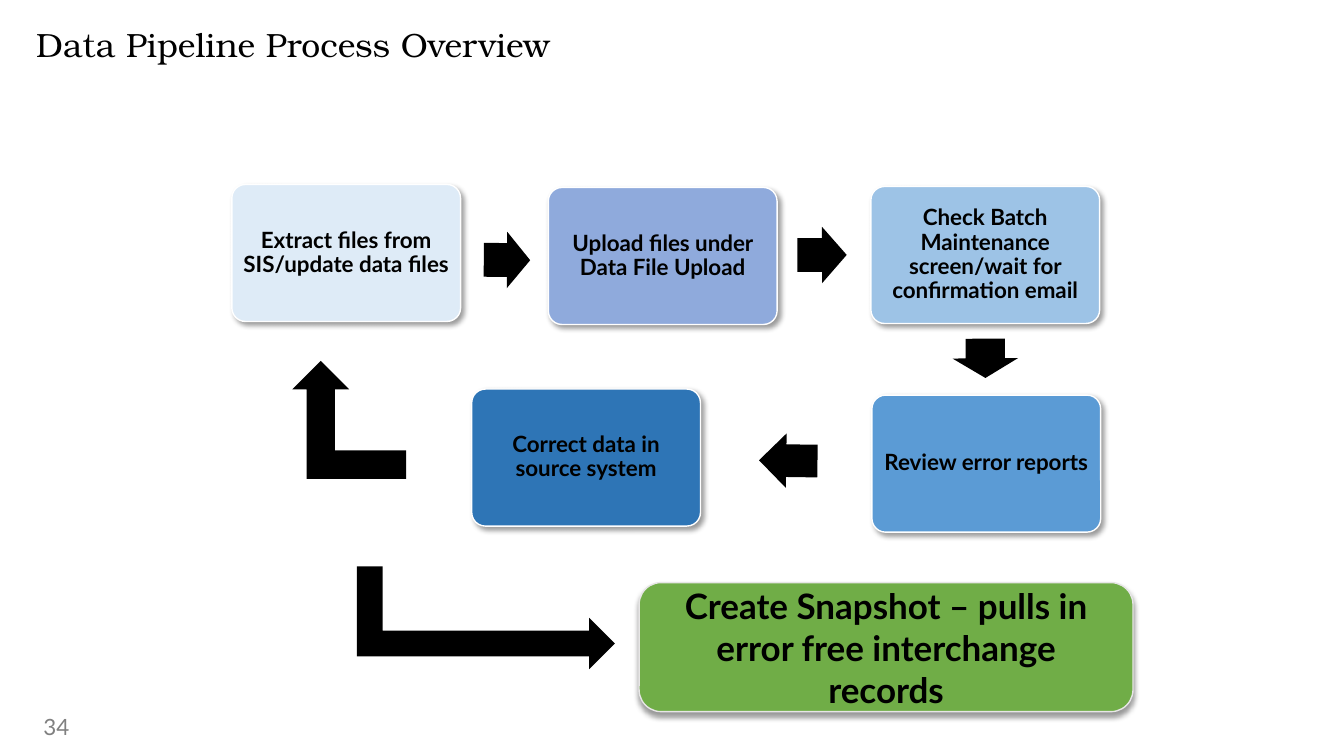
from lxml import etree
from pptx import Presentation
from pptx.dml.color import RGBColor
from pptx.enum.shapes import MSO_SHAPE
from pptx.enum.text import MSO_ANCHOR, PP_ALIGN
from pptx.oxml.ns import qn
from pptx.util import Inches, Pt

ROUNDED = MSO_SHAPE.ROUNDED_RECTANGLE
ARROW = MSO_SHAPE.RIGHT_ARROW
BENT_ARROW = MSO_SHAPE.BENT_UP_ARROW
TOP, MIDDLE = MSO_ANCHOR.TOP, MSO_ANCHOR.MIDDLE
LEFT, CENTER = PP_ALIGN.LEFT, PP_ALIGN.CENTER

WIDTH, HEIGHT = Inches(13.33), Inches(7.5)
COLUMNS, ROWS = 40, 30
STEP_SIZE = (6.81, 5.44)

# wording, fill, column, row
STEPS = [
    ("Extract files from SIS/update data files", "DEEBF7", 6.9, 7.32),
    ("Upload files under Data File Upload", "8FAADC", 16.32, 7.44),
    ("Check Batch Maintenance screen/wait for confirmation email", "9DC3E6", 25.92, 7.4),
    ("Review error reports", "5B9BD5", 25.95, 15.68),
    ("Correct data in source system", "2E75B6", 14.04, 15.44),
]

# place on the grid, rotation in degrees
STEP_ARROWS = [
    ((14.4, 9.2, 1.38, 2.24), 0.5),
    ((23.73, 9, 1.47, 2.24), 359.8),
    ((28.74, 12.92, 1.17, 2.6), 89.6),
    ((22.59, 17.2, 1.74, 2.16), 180.8),
]


def color(value):
    return RGBColor.from_string(value)


class ProcessSlide:
    """Draws on one slide; places are (column, row, columns wide, rows high)."""

    body_font = "Lato"
    title_font = "TeX Gyre Bonum"
    ink = "000000"

    def __init__(self, deck):
        self.page = deck.slides.add_slide(deck.slide_layouts[6])

    def place(self, grid):
        units = (WIDTH / COLUMNS, HEIGHT / ROWS) * 2
        return [round(length * unit) for length, unit in zip(grid, units)]

    def shape(self, kind, grid, fill):
        shape = self.page.shapes.add_shape(kind, *self.place(grid))
        shape.shadow.inherit = False
        shape.fill.solid()
        shape.fill.fore_color.rgb = color(fill)
        shape.line.fill.background()
        return shape

    def set_text(self, box, words, size, font=body_font, ink=ink, bold=False,
                 align=LEFT, anchor=TOP, spacing=1.0, insets=(0.1, 0.05)):
        frame = box.text_frame
        frame.word_wrap = True
        frame.vertical_anchor = anchor
        frame.margin_left = frame.margin_right = Inches(insets[0])
        frame.margin_top = frame.margin_bottom = Inches(insets[1])
        para = frame.paragraphs[0]
        para.alignment = align
        para.line_spacing = spacing
        span = para.add_run()
        span.text = words
        span.font.name = font
        span.font.size = Pt(size)
        span.font.bold = bold
        span.font.color.rgb = color(ink)

    def text(self, grid, words, size, **style):
        box = self.page.shapes.add_textbox(*self.place(grid))
        self.set_text(box, words, size, **style)

    def cast_shadow(self, shape, angle):
        effects = shape._element.spPr.find(qn("a:effectLst"))
        shadow = etree.SubElement(
            effects, qn("a:outerShdw"), blurRad=str(Pt(4)), dist=str(Pt(3)),
            dir=str(angle * 60000), algn="ctr", rotWithShape="0")
        tint = etree.SubElement(shadow, qn("a:srgbClr"), val=self.ink)
        etree.SubElement(tint, qn("a:alpha"), val="40000")

    def card(self, grid, words, fill, size, border="FFFFFF", corner=0.1,
             shadow_angle=45, **style):
        card = self.shape(ROUNDED, grid, fill)
        card.adjustments[0] = corner
        card.line.color.rgb = color(border)
        card.line.width = Pt(1)
        self.cast_shadow(card, shadow_angle)
        self.set_text(card, words, size, bold=True, align=CENTER, anchor=MIDDLE, **style)

    def step_arrow(self, grid, rotation):
        arrow = self.shape(ARROW, grid, self.ink)
        arrow.adjustments[0] = 0.6
        arrow.adjustments[1] = 0.5
        arrow.rotation = rotation

    def bent_arrow(self, grid, rotation=0, mirrored=False):
        arrow = self.shape(BENT_ARROW, grid, self.ink)
        arrow.rotation = rotation
        if mirrored:
            arrow._element.spPr.xfrm.set("flipH", "1")


def main():
    deck = Presentation()
    deck.slide_width, deck.slide_height = WIDTH, HEIGHT
    slide = ProcessSlide(deck)

    slide.text((1.08, 1.12, 26.61, 3.32), "Data Pipeline Process Overview", 24,
               font=slide.title_font, spacing=0.9, insets=(0, 0))
    for words, fill, column, row in STEPS:
        slide.card((column, row, *STEP_SIZE), words, fill, 16,
                   spacing=0.9, insets=(0.07, 0.07))
    for grid, rotation in STEP_ARROWS:
        slide.step_arrow(grid, rotation)

    slide.card((19.02, 23.12, 14.7, 5.12),
               "Create Snapshot – pulls in error free interchange records",
               "70AD47", 25, border="E7E6E6", corner=0.17, shadow_angle=90)
    slide.bent_arrow((12.93, 19.4, 3.06, 10.24), rotation=90)
    slide.bent_arrow((8.7, 14.32, 3.39, 4.68), mirrored=True)
    slide.text((1, 28.12, 9, 1.6), "34", 16, ink="808080")

    deck.save("out.pptx")


if __name__ == "__main__":
    main()
